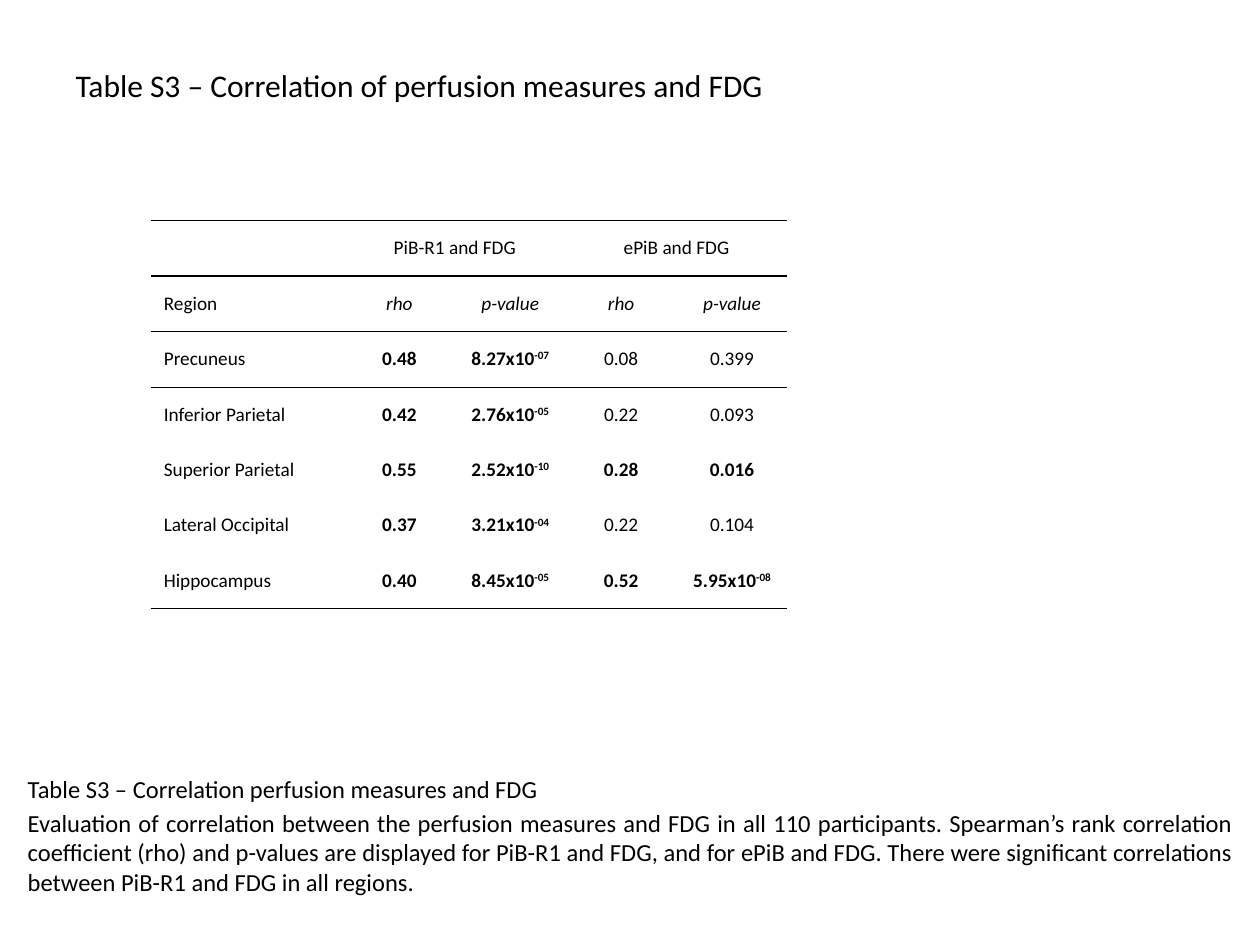
from dataclasses import dataclass

from lxml import etree
from pptx import Presentation
from pptx import util as u
from pptx.dml.color import RGBColor
from pptx.enum import text
from pptx.oxml import ns

FONT = "Calibri"
INK = "000000"
THICK, THIN = 1, 0.25
ROW_HEIGHT = 0.44
COLUMN_WIDTHS = [1.53] + [0.88] * 4
LEFT, CENTER, JUSTIFY = text.PP_ALIGN.LEFT, text.PP_ALIGN.CENTER, text.PP_ALIGN.JUSTIFY

TITLE = "Table S3 – Correlation of perfusion measures and FDG"
CAPTION = [
    "Table S3 – Correlation perfusion measures and FDG",
    "Evaluation of correlation between the perfusion measures and FDG in all 110 participants. "
    "Spearman’s rank correlation coefficient (rho) and p-values are displayed for PiB-R1 and FDG, "
    "and for ePiB and FDG. There were significant correlations between PiB-R1 and FDG in all regions.",
]


@dataclass
class Correlation:
    rho: str
    p_value: str
    significant: bool = True


@dataclass
class Region:
    name: str
    pib_r1: Correlation
    epib: Correlation


REGIONS = [
    Region("Precuneus", Correlation("0.48", "8.27x10^-07"), Correlation("0.08", "0.399", False)),
    Region("Inferior Parietal", Correlation("0.42", "2.76x10^-05"), Correlation("0.22", "0.093", False)),
    Region("Superior Parietal", Correlation("0.55", "2.52x10^-10"), Correlation("0.28", "0.016")),
    Region("Lateral Occipital", Correlation("0.37", "3.21x10^-04"), Correlation("0.22", "0.104", False)),
    Region("Hippocampus", Correlation("0.40", "8.45x10^-05"), Correlation("0.52", "5.95x10^-08")),
]


def color(value: str) -> RGBColor:
    return RGBColor.from_string(value)


def write(para, words: str, *, size: float, align=LEFT, bold=False, italic=False) -> None:
    """Fill a paragraph; whatever follows a caret is superscript."""
    para.alignment = align
    for index, part in enumerate(words.split("^")):
        span = para.add_run()
        span.text = part
        font = span.font
        font.name, font.size, font.bold, font.italic = FONT, u.Pt(size), bold, italic
        font.color.rgb = color(INK)
        if index:
            span._r.get_or_add_rPr().set("baseline", "30000")


def place(shape, left: float, top: float, width: float, height: float) -> None:
    shape.left, shape.top = u.Inches(left), u.Inches(top)
    shape.width, shape.height = u.Inches(width), u.Inches(height)


def set_borders(cell, top: float, bottom: float) -> None:
    """Rule the cell above and below, in points; zero means no line."""
    properties = cell._tc.get_or_add_tcPr()
    for side, width in (("L", 0), ("R", 0), ("T", top), ("B", bottom)):
        line = etree.SubElement(properties, ns.qn(f"a:ln{side}"), w=str(u.Pt(width)))
        if width:
            fill = etree.SubElement(line, ns.qn("a:solidFill"))
            etree.SubElement(fill, ns.qn("a:srgbClr"), val=INK)
        else:
            etree.SubElement(line, ns.qn("a:noFill"))


def add_correlation_table(page) -> None:
    row_count = len(REGIONS) + 2
    frame = page.shapes.add_table(
        row_count, len(COLUMN_WIDTHS), u.Inches(1.2), u.Inches(1.75),
        u.Inches(sum(COLUMN_WIDTHS)), u.Inches(ROW_HEIGHT * row_count))
    table = frame.table
    table.first_row = table.horz_banding = False
    for column, width in zip(table.columns, COLUMN_WIDTHS):
        column.width = u.Inches(width)

    # Rules above the first row, then below each row
    rules = [THICK, THICK, THIN, THIN] + [0] * (len(REGIONS) - 2) + [THICK]
    for index, row in enumerate(table.rows):
        row.height = u.Inches(ROW_HEIGHT)
        for cell in row.cells:
            set_borders(cell, rules[index], rules[index + 1])
            cell.fill.background()
            cell.vertical_anchor = text.MSO_ANCHOR.MIDDLE

    def fill_cell(row: int, column: int, words: str, **style) -> None:
        align = CENTER if column else LEFT
        write(table.cell(row, column).text_frame.paragraphs[0], words, size=11, align=align, **style)

    fill_cell(1, 0, "Region")
    for column, heading in ((1, "PiB-R1 and FDG"), (3, "ePiB and FDG")):
        table.cell(0, column).merge(table.cell(0, column + 1))
        fill_cell(0, column, heading)
        fill_cell(1, column, "rho", italic=True)
        fill_cell(1, column + 1, "p-value", italic=True)
    for row, region in enumerate(REGIONS, start=2):
        fill_cell(row, 0, region.name)
        for column, result in ((1, region.pib_r1), (3, region.epib)):
            fill_cell(row, column, result.rho, bold=result.significant)
            fill_cell(row, column + 1, result.p_value, bold=result.significant)


def add_caption(body) -> None:
    place(body, 0.12, 6.09, 9.77, 1.41)
    frame = body.text_frame
    for index, words in enumerate(CAPTION):
        para = frame.add_paragraph() if index else frame.paragraphs[0]
        write(para, words, size=14, align=JUSTIFY)
        properties = para._p.get_or_add_pPr()
        properties.set("marL", "0")
        properties.set("indent", "0")
        etree.SubElement(properties, ns.qn("a:buNone"))


def main() -> None:
    deck = Presentation()
    deck.slide_width, deck.slide_height = u.Inches(10), u.Inches(7.5)
    page = deck.slides.add_slide(deck.slide_layouts[1])
    title, body = page.placeholders
    place(title, 0.5, 0.3, 9, 0.75)
    title.text_frame.vertical_anchor = text.MSO_ANCHOR.MIDDLE
    write(title.text_frame.paragraphs[0], TITLE, size=18)
    add_caption(body)
    add_correlation_table(page)
    deck.save("out.pptx")


if __name__ == "__main__":
    main()
